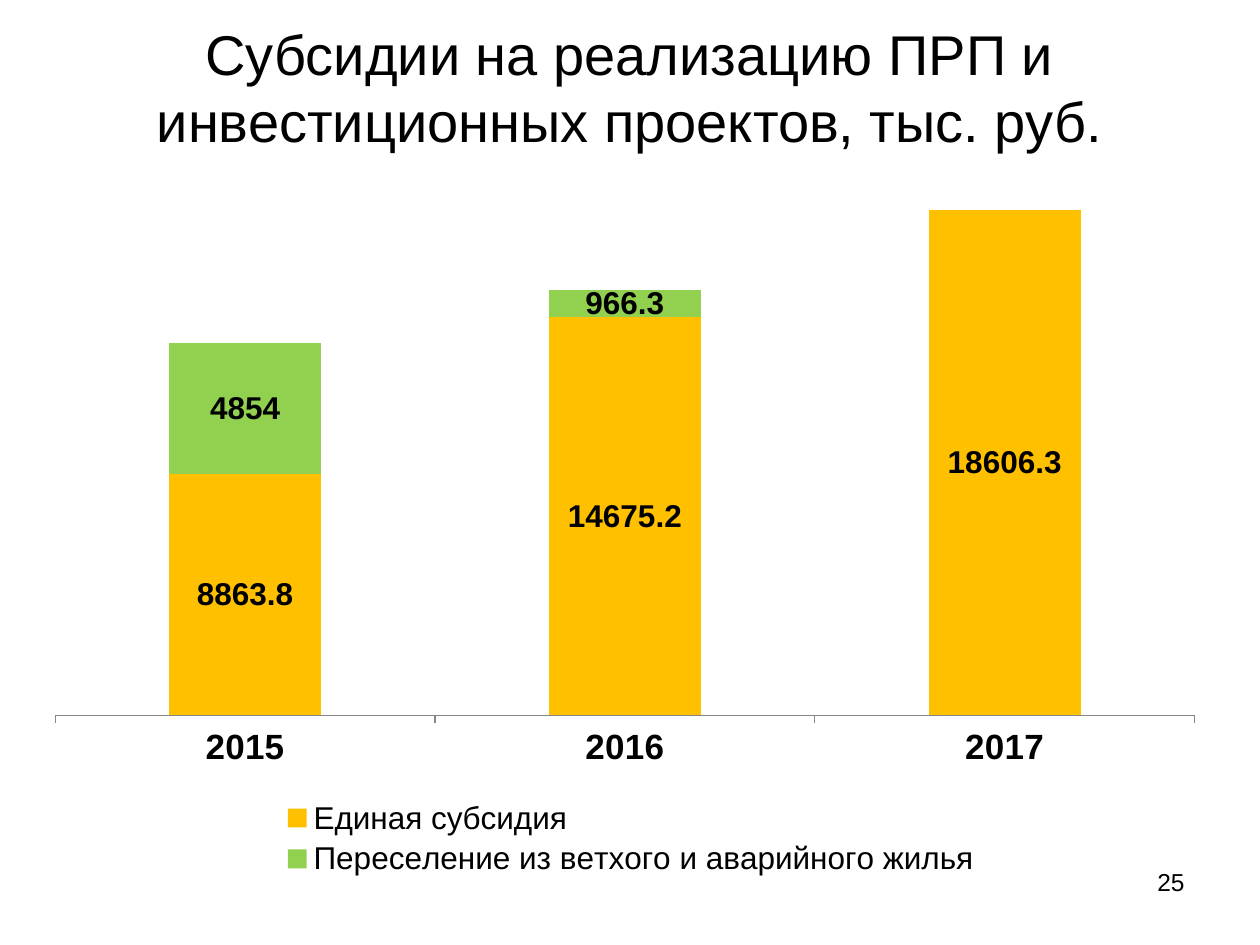
"""Builds the slide on subsidies for local projects, with a stacked column chart."""
from lxml import etree
from pptx import Presentation
from pptx import util as u
from pptx.chart.data import CategoryChartData
from pptx.dml.color import RGBColor
from pptx.enum import chart as ch, text
from pptx.oxml.ns import qn

BLACK = RGBColor(0, 0, 0)
AXIS_GREY = RGBColor(0x86, 0x86, 0x86)
AMBER = RGBColor(0xFF, 0xC0, 0x00)
GREEN = RGBColor(0x92, 0xD0, 0x50)

YEARS = ("2015", "2016", "2017")
SUBSIDIES = (
    ("Единая субсидия", (8863.8, 14675.2, 18606.3), AMBER),
    ("Переселение из ветхого и аварийного жилья", (4854, 966.3, None), GREEN),
)


def style_font(font, size, bold=False, color=BLACK, name="Arial"):
    font.size, font.bold, font.name = u.Pt(size), bold, name
    font.color.rgb = color


def write(frame, words, align=text.PP_ALIGN.LEFT, anchor=text.MSO_ANCHOR.TOP, **style):
    frame.word_wrap = True
    frame.vertical_anchor = anchor
    paragraph = frame.paragraphs[0]
    paragraph.alignment = align
    run = paragraph.add_run()
    run.text = words
    style_font(run.font, **style)


def place(part, x, y, w, h, inner=False):
    for old in part.findall(qn("c:layout")):
        part.remove(old)
    layout = etree.Element(qn("c:layout"))
    manual = etree.SubElement(layout, qn("c:manualLayout"))
    settings = [("layoutTarget", "inner")] if inner else []
    settings += [("xMode", "edge"), ("yMode", "edge"),
                 ("x", x), ("y", y), ("w", w), ("h", h)]
    for tag, value in settings:
        etree.SubElement(manual, qn(f"c:{tag}")).set("val", str(value))
    part.insert(0 if inner else 1, layout)


class SlideBuilder:
    def __init__(self, deck):
        self.slide = deck.slides.add_slide(deck.slide_layouts[6])

    def label(self, words, box, **style):
        textbox = self.slide.shapes.add_textbox(*map(u.Inches, box))
        write(textbox.text_frame, words, **style)

    def stacked_columns(self, categories, series, box):
        data = CategoryChartData(number_format="General")
        data.categories = categories
        for name, values, _ in series:
            data.add_series(name, values)
        chart = self.slide.shapes.add_chart(
            ch.XL_CHART_TYPE.COLUMN_STACKED, *map(u.Inches, box), data).chart
        chart.has_title = False
        style_font(chart.font, 18)

        plot = chart.plots[0]
        plot.gap_width, plot.overlap = 150, 100
        plot.vary_by_categories = False
        for column, (_, _, color) in zip(plot.series, series):
            column.format.fill.solid()
            column.format.fill.fore_color.rgb = color
            labels = column.data_labels
            labels.show_value = True
            labels.position = ch.XL_LABEL_POSITION.CENTER
            style_font(labels.font, 18, bold=True)

        years = chart.category_axis
        years.major_tick_mark = ch.XL_TICK_MARK.OUTSIDE
        years.format.line.color.rgb = AXIS_GREY
        style_font(years.tick_labels.font, 20, bold=True)
        amounts = chart.value_axis
        amounts.visible = False
        amounts.has_major_gridlines = False
        amounts.minimum_scale, amounts.maximum_scale = 0, 20000

        chart.has_legend = True
        legend = chart.legend
        legend.position = ch.XL_LEGEND_POSITION.BOTTOM
        legend.include_in_layout = False
        style_font(legend.font, 18)
        plot_area = chart.element.find(".//" + qn("c:plotArea"))
        place(plot_area, 0.02, 0.02, 0.96, 0.75, inner=True)
        place(chart.element.find(".//" + qn("c:legend")), 0.21, 0.88, 0.59, 0.12)


def main():
    deck = Presentation()
    deck.slide_width, deck.slide_height = u.Inches(10), u.Inches(7.5)
    builder = SlideBuilder(deck)
    builder.label("Субсидии на реализацию ПРП и инвестиционных проектов, тыс. руб.",
                  (0.5, 0.3, 9, 0.78), size=32,
                  align=text.PP_ALIGN.CENTER, anchor=text.MSO_ANCHOR.MIDDLE)
    builder.stacked_columns(YEARS, SUBSIDIES, (0.25, 1.25, 9.42, 5.75))
    builder.label("25", (7.17, 6.83, 2.33, 0.52), size=14, align=text.PP_ALIGN.RIGHT)
    deck.save("out.pptx")


if __name__ == "__main__":
    main()
